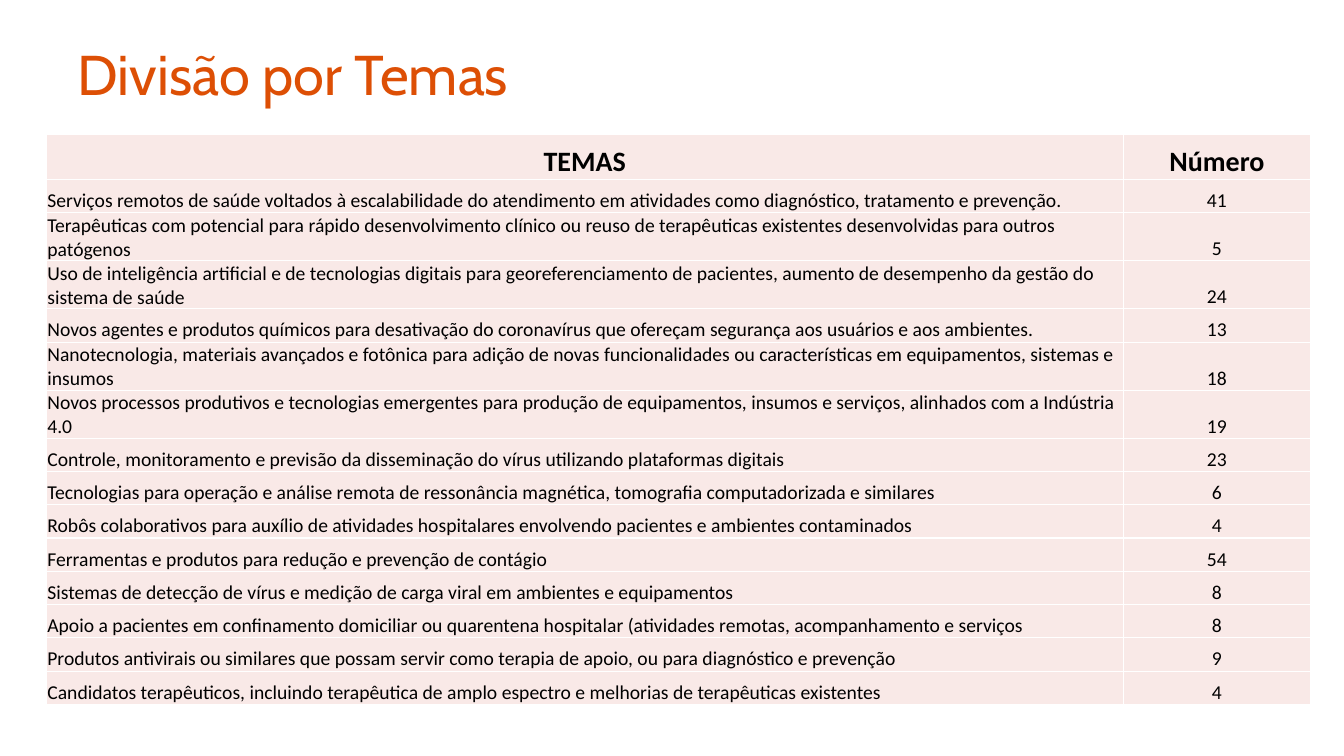
import pptx
import pptx.util
import pptx.dml.color
import pptx.enum.text
import pptx.oxml
import pptx.oxml.ns

COLORS = {"title": "DD4F05", "text": "000000", "cell": "F9E9E7", "rule": "FFFFFF"}
HEADS = ("TEMAS", "Número")
THEMES = [
    ("Serviços remotos de saúde voltados à escalabilidade do atendimento em atividades como diagnóstico, tratamento e prevenção.", 41),
    ("Terapêuticas com potencial para rápido desenvolvimento clínico ou reuso de terapêuticas existentes desenvolvidas para outros patógenos", 5),
    ("Uso de inteligência artificial e de tecnologias digitais para georeferenciamento de pacientes, aumento de desempenho da gestão do sistema de saúde", 24),
    ("Novos agentes e produtos químicos para desativação do coronavírus que ofereçam segurança aos usuários e aos ambientes.", 13),
    ("Nanotecnologia, materiais avançados e fotônica para adição de novas funcionalidades ou características em equipamentos, sistemas e insumos", 18),
    ("Novos processos produtivos e tecnologias emergentes para produção de equipamentos, insumos e serviços, alinhados com a Indústria 4.0", 19),
    ("Controle, monitoramento e previsão da disseminação do vírus utilizando plataformas digitais", 23),
    ("Tecnologias para operação e análise remota de ressonância magnética, tomografia computadorizada e similares", 6),
    ("Robôs colaborativos para auxílio de atividades hospitalares envolvendo pacientes e ambientes contaminados", 4),
    ("Ferramentas e produtos para redução e prevenção de contágio", 54),
    ("Sistemas de detecção de vírus e medição de carga viral em ambientes e equipamentos", 8),
    ("Apoio a pacientes em confinamento domiciliar ou quarentena hospitalar (atividades remotas, acompanhamento e serviços", 8),
    ("Produtos antivirais ou similares que possam servir como terapia de apoio, ou para diagnóstico e prevenção", 9),
    ("Candidatos terapêuticos, incluindo terapêutica de amplo espectro e melhorias de terapêuticas existentes", 4),
]

Inches = pptx.util.Inches
Align = pptx.enum.text.PP_ALIGN
Anchor = pptx.enum.text.MSO_ANCHOR


class Deck:
    """Holds the style and the current slide, and draws its elements."""

    def __init__(self):
        self.show = pptx.Presentation()
        self.show.slide_width = Inches(13.33)
        self.show.slide_height = Inches(7.5)
        self.slide = self.show.slides.add_slide(self.show.slide_layouts[6])

    def color(self, name):
        return pptx.dml.color.RGBColor.from_string(COLORS[name])

    def run(self, para, text, size, face="Calibri", tint="text", bold=False):
        run = para.add_run()
        run.text = text
        run.font.size = pptx.util.Pt(size)
        run.font.name = face
        run.font.bold = bold
        run.font.color.rgb = self.color(tint)

    def title(self, text, left, top, width, height):
        box = self.slide.shapes.add_textbox(
            Inches(left), Inches(top), Inches(width), Inches(height))
        frame = box.text_frame
        frame.word_wrap = True
        frame.vertical_anchor = Anchor.MIDDLE
        self.run(frame.paragraphs[0], text, 40, "Cabin", "title")

    def border(self, cell):
        props = cell._tc.get_or_add_tcPr()
        for place, side in enumerate(("lnL", "lnR", "lnT", "lnB")):
            props.insert(place, pptx.oxml.parse_xml(
                f'<a:{side} {pptx.oxml.ns.nsdecls("a")} w="12700"><a:solidFill>'
                f'<a:srgbClr val="{COLORS["rule"]}"/></a:solidFill></a:{side}>'))

    def cell(self, cell, text, size, align, bold):
        cell.margin_left = cell.margin_right = cell.margin_top = Inches(0.01)
        cell.margin_bottom = 0
        cell.vertical_anchor = Anchor.BOTTOM
        cell.fill.solid()
        cell.fill.fore_color.rgb = self.color("cell")
        self.border(cell)
        para = cell.text_frame.paragraphs[0]
        para.alignment = align
        self.run(para, text, size, bold=bold)

    def table(self, heads, rows, left, top, widths, first, rest):
        lines = [heads, *rows]
        height = first + rest * len(rows)
        grid = self.slide.shapes.add_table(
            len(lines), len(widths), Inches(left), Inches(top),
            Inches(sum(widths)), Inches(height)).table
        for col, width in zip(grid.columns, widths):
            col.width = Inches(width)
        for r, line in enumerate(lines):
            head = r == 0
            grid.rows[r].height = Inches(first if head else rest)
            for c, value in enumerate(line):
                align = Align.CENTER if head or c else Align.LEFT
                self.cell(grid.cell(r, c), str(value), 20 if head else 14, align, head)


def main():
    deck = Deck()
    deck.title("Divisão por Temas", 0.67, 0.3, 12, 0.85)
    deck.table(HEADS, THEMES, 0.46, 1.33, (10.68, 1.86), 0.45, 0.33)
    deck.show.save("out.pptx")


if __name__ == "__main__":
    main()
